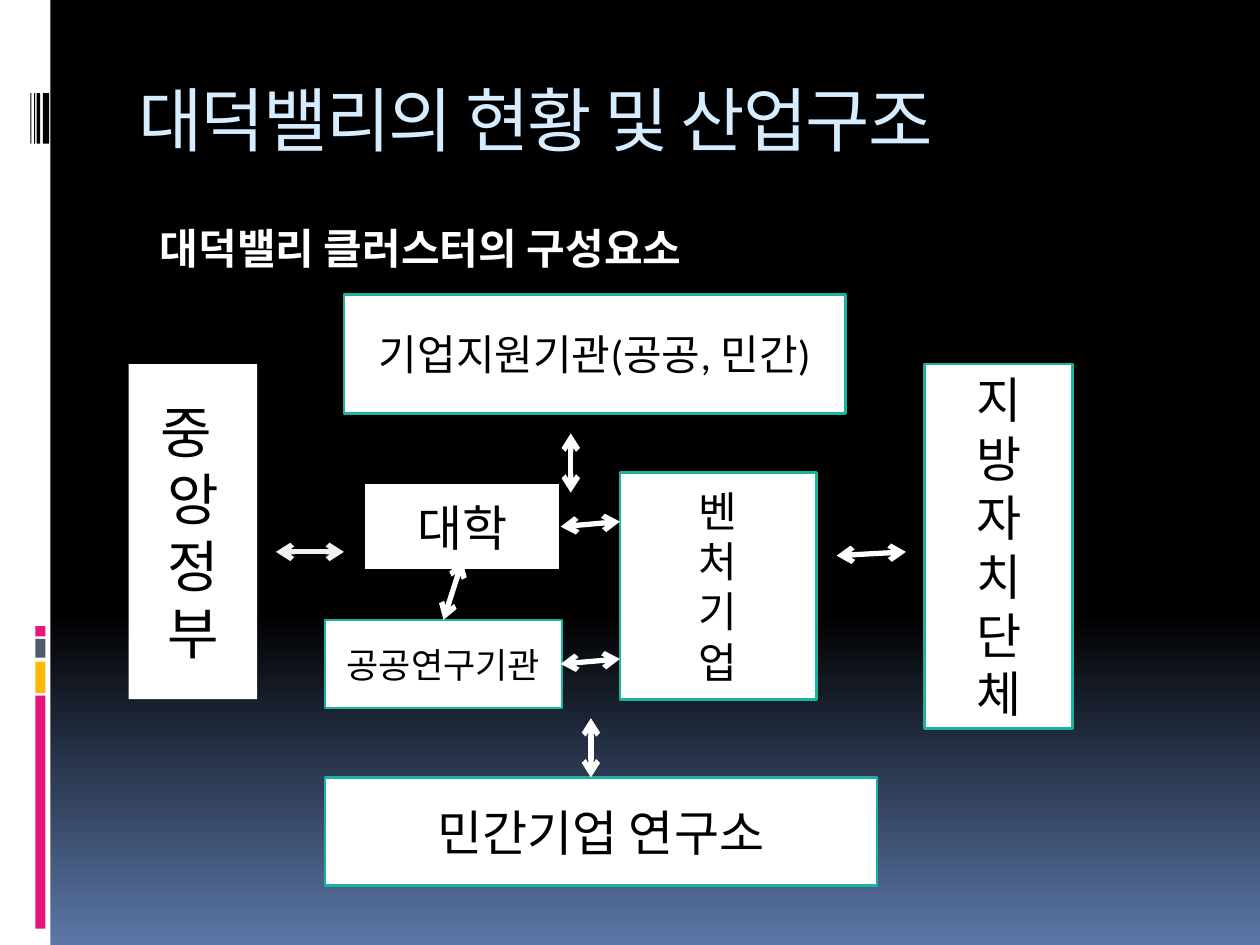
from lxml import etree
from pptx import Presentation
from pptx.dml.color import RGBColor
from pptx.enum.shapes import MSO_CONNECTOR, MSO_SHAPE
from pptx.enum.text import MSO_ANCHOR, MSO_AUTO_SIZE, PP_ALIGN
from pptx.oxml.ns import qn
from pptx.util import Inches, Pt

RECTANGLE = MSO_SHAPE.RECTANGLE
STRAIGHT = MSO_CONNECTOR.STRAIGHT
MIDDLE = MSO_ANCHOR.MIDDLE
CENTER = PP_ALIGN.CENTER
FIT_SHAPE = MSO_AUTO_SIZE.SHAPE_TO_FIT_TEXT

BLACK = RGBColor(0x00, 0x00, 0x00)
WHITE = RGBColor(0xFF, 0xFF, 0xFF)
PALE_GRAY = RGBColor(0xF2, 0xF2, 0xF2)
SKY = RGBColor(0xD6, 0xEC, 0xFF)
BLUE = RGBColor(0x5B, 0x77, 0xA8)
SLATE = RGBColor(0x4E, 0x5B, 0x6F)
PINK = RGBColor(0xEA, 0x15, 0x7A)
AMBER = RGBColor(0xFE, 0xB8, 0x0A)
TEAL = RGBColor(0x1A, 0xB3, 0x9F)

TITLE_FONT = "Noto Sans Mono"
BODY_FONT = "Calibri"

ACCENT_BARS = [(5.52, 1.85, PINK), (5.25, 0.25, AMBER),
               (5.07, 0.15, SLATE), (4.97, 0.08, PINK)]
BARCODE_STRIPES = [(0.34, 0.05), (0.29, 0.03), (0.27, 0.01), (0.24, 0.01)]

ORGANIZATIONS = [
    ((1.02, 2.89, 1.02, 2.66), ["중 ", "앙", "정", "부"], 32, None),
    ((2.73, 2.34, 3.98, 0.94), ["기업지원기관(공공, 민간)"], 24, TEAL),
    ((2.89, 3.83, 1.56, 0.7), ["대학"], 28, BLACK),
    ((2.58, 4.92, 1.88, 0.7), ["공공연구기관"], 20, TEAL),
    ((4.92, 3.75, 1.56, 1.8), list("벤처기업"), 24, TEAL),
    ((7.34, 2.89, 1.17, 2.89), list("지방자치단체"), 28, TEAL),
    ((2.58, 6.17, 4.38, 0.86), ["민간기업 연구소"], 28, TEAL),
]

LINKS = [
    ((4.53, 3.44, 4.53, 3.91), WHITE),
    ((2.19, 4.38, 2.73, 4.38), PALE_GRAY),
    ((3.67, 4.45, 3.52, 4.92), WHITE),
    ((4.45, 4.18, 4.92, 4.14), WHITE),
    ((4.45, 5.27, 4.92, 5.23), WHITE),
    ((6.64, 4.41, 7.19, 4.38), WHITE),
    ((4.69, 5.7, 4.69, 6.17), WHITE),
]


def inches(values):
    return [Inches(value) for value in values]


def paint_background(slide):
    fill = slide.background.fill
    fill.gradient()
    fill.gradient_angle = 270
    for stop, position, color in zip(fill.gradient_stops, (0.65, 1), (BLACK, BLUE)):
        stop.position = position
        stop.color.rgb = color


def add_block(slide, area, color, outline=None):
    block = slide.shapes.add_shape(RECTANGLE, *inches(area))
    block.shadow.inherit = False
    block.fill.solid()
    block.fill.fore_color.rgb = color
    if outline is None:
        block.line.fill.background()
    else:
        block.line.color.rgb = outline
        block.line.width = Pt(1.5)
    return block


def add_run(paragraph, text, size, color, font=BODY_FONT):
    run = paragraph.add_run()
    run.text = text
    run.font.name = font
    run.font.size = Pt(size)
    run.font.color.rgb = color
    return run


def add_organization(slide, area, lines, size, outline):
    frame = add_block(slide, area, WHITE, outline).text_frame
    frame.word_wrap = True
    frame.vertical_anchor = MIDDLE
    for index, line in enumerate(lines):
        paragraph = frame.add_paragraph() if index else frame.paragraphs[0]
        paragraph.alignment = CENTER
        add_run(paragraph, line, size, BLACK)


def add_link(slide, ends, color):
    link = slide.shapes.add_connector(STRAIGHT, *inches(ends))
    link.line.color.rgb = color
    link.line.width = Pt(3)
    outline = link.line._get_or_add_ln()
    for end in ("a:headEnd", "a:tailEnd"):
        etree.SubElement(outline, qn(end), type="arrow")
    etree.SubElement(link._element.spPr, qn("a:effectLst"))


def add_sidebar(slide):
    add_block(slide, (0, 0, 0.4, 7.5), WHITE)
    for top, height, color in ACCENT_BARS:
        add_block(slide, (0.28, top, 0.08, height), color)
    for left, width in BARCODE_STRIPES:
        add_block(slide, (left, 0.74, width, 0.4), BLACK)


def add_headings(slide):
    title = slide.shapes.add_textbox(*inches((1, 0.56, 8.5, 1))).text_frame
    title.word_wrap = True
    title_run = add_run(title.paragraphs[0], "대덕밸리의 현황 및 산업구조", 40, SKY, TITLE_FONT)
    title_run.font._element.set("spc", "-100")

    subtitle = slide.shapes.add_textbox(*inches((1.17, 1.72, 4.71, 0.5))).text_frame
    subtitle.word_wrap = False
    subtitle.auto_size = FIT_SHAPE
    subtitle_run = add_run(subtitle.paragraphs[0], "대덕밸리 클러스터의 구성요소", 24, WHITE)
    subtitle_run.font.bold = True


def main():
    deck = Presentation()
    deck.slide_width = Inches(10)
    deck.slide_height = Inches(7.5)
    slide = deck.slides.add_slide(deck.slide_layouts[6])
    paint_background(slide)
    add_sidebar(slide)
    add_headings(slide)
    for organization in ORGANIZATIONS:
        add_organization(slide, *organization)
    for link in LINKS:
        add_link(slide, *link)
    deck.save("out.pptx")


if __name__ == "__main__":
    main()
